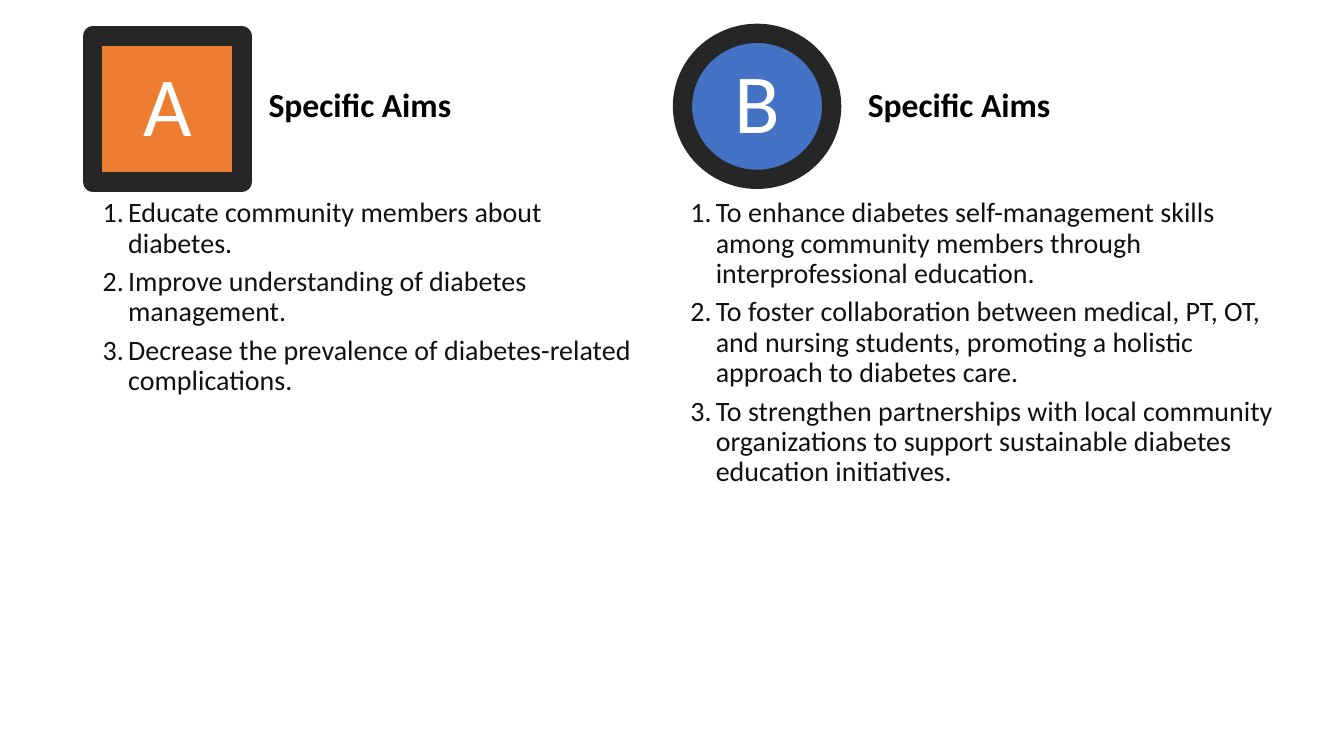
from lxml.etree import SubElement
from pptx import Presentation
from pptx.dml.color import RGBColor
from pptx.enum.shapes import MSO_SHAPE as Preset
from pptx.enum.text import MSO_ANCHOR as Anchor, PP_ALIGN as Align
from pptx.oxml.ns import qn
from pptx.util import Cm, Pt

WHITE = RGBColor(0xFF, 0xFF, 0xFF)
BLACK = RGBColor(0x00, 0x00, 0x00)
INK = RGBColor(0x11, 0x11, 0x11)
FRAME = RGBColor(0x26, 0x26, 0x26)
ORANGE = RGBColor(0xED, 0x7D, 0x31)
BLUE = RGBColor(0x44, 0x72, 0xC4)

BADGE_FONT = {"name": "Calibri", "size": Pt(60)}
HEADING_FONT = {"name": "Calibri", "size": Pt(24), "bold": True}
AIM_FONT = {"name": "Calibri", "size": Pt(20)}

# Positions in cm: badge (left, top), heading (left, width, indent), aims (left, width)
COLUMNS = [
    {
        "letter": "A", "preset": Preset.RECTANGLE, "color": ORANGE,
        "badge": (2.34, 0.91), "heading": (1.9, 14.33, 4.62), "list": (2.34, 14.33),
        "aims": [
            "Educate community members about diabetes.",
            "Improve understanding of diabetes management.",
            "Decrease the prevalence of diabetes-related complications.",
        ],
    },
    {
        "letter": "B", "preset": Preset.OVAL, "color": BLUE,
        "badge": (17.2, 0.84), "heading": (16.66, 14.4, 4.96), "list": (17.15, 15.37),
        "aims": [
            "To enhance diabetes self-management skills among community members "
            "through interprofessional education.",
            "To foster collaboration between medical, PT, OT, and nursing students, "
            "promoting a holistic approach to diabetes care.",
            "To strengthen partnerships with local community organizations to support "
            "sustainable diabetes education initiatives.",
        ],
    },
]


def write(paragraph, text, font_format, color):
    paragraph.text = text
    paragraph.line_spacing = 0.9
    for name, value in font_format.items():
        setattr(paragraph.font, name, value)
    paragraph.font.color.rgb = color


def indent(paragraph, left, first_line):
    properties = paragraph._p.get_or_add_pPr()
    properties.set("marL", str(Cm(left)))
    properties.set("indent", str(Cm(first_line)))
    return properties


presentation = Presentation()
presentation.slide_width, presentation.slide_height = Cm(33.87), Cm(19.05)
slide = presentation.slides.add_slide(presentation.slide_layouts[6])

for column in COLUMNS:
    left, top = column["badge"]
    badge = slide.shapes.add_shape(column["preset"], Cm(left), Cm(top), Cm(3.76), Cm(3.68))
    badge.shadow.inherit = False
    badge.fill.solid()
    badge.fill.fore_color.rgb = column["color"]
    badge.line.color.rgb = FRAME
    badge.line.width = Pt(13.75)
    SubElement(badge.line._get_or_add_ln(), qn("a:round"))
    badge.text_frame.vertical_anchor = Anchor.MIDDLE
    letter = badge.text_frame.paragraphs[0]
    letter.alignment = Align.CENTER
    write(letter, column["letter"], BADGE_FONT, WHITE)

    left, width, heading_indent = column["heading"]
    heading = slide.shapes.add_textbox(Cm(left), Cm(0.99), Cm(width), Cm(2.29))
    heading.text_frame.word_wrap = True
    heading.text_frame.vertical_anchor = Anchor.BOTTOM
    title = heading.text_frame.paragraphs[0]
    indent(title, heading_indent, 0)
    write(title, "Specific Aims", HEADING_FONT, BLACK)

    left, width = column["list"]
    frame = slide.shapes.add_textbox(Cm(left), Cm(4.88), Cm(width), Cm(10.24)).text_frame
    frame.word_wrap = True
    for number, aim in enumerate(column["aims"]):
        paragraph = frame.add_paragraph() if number else frame.paragraphs[0]
        properties = indent(paragraph, 0.64, -0.64)
        SubElement(properties, qn("a:buFont"), typeface="+mj-lt")
        SubElement(properties, qn("a:buAutoNum"), type="arabicPeriod")
        write(paragraph, aim, AIM_FONT, INK)
        if number:
            paragraph.space_before = Pt(6)

presentation.save("out.pptx")
